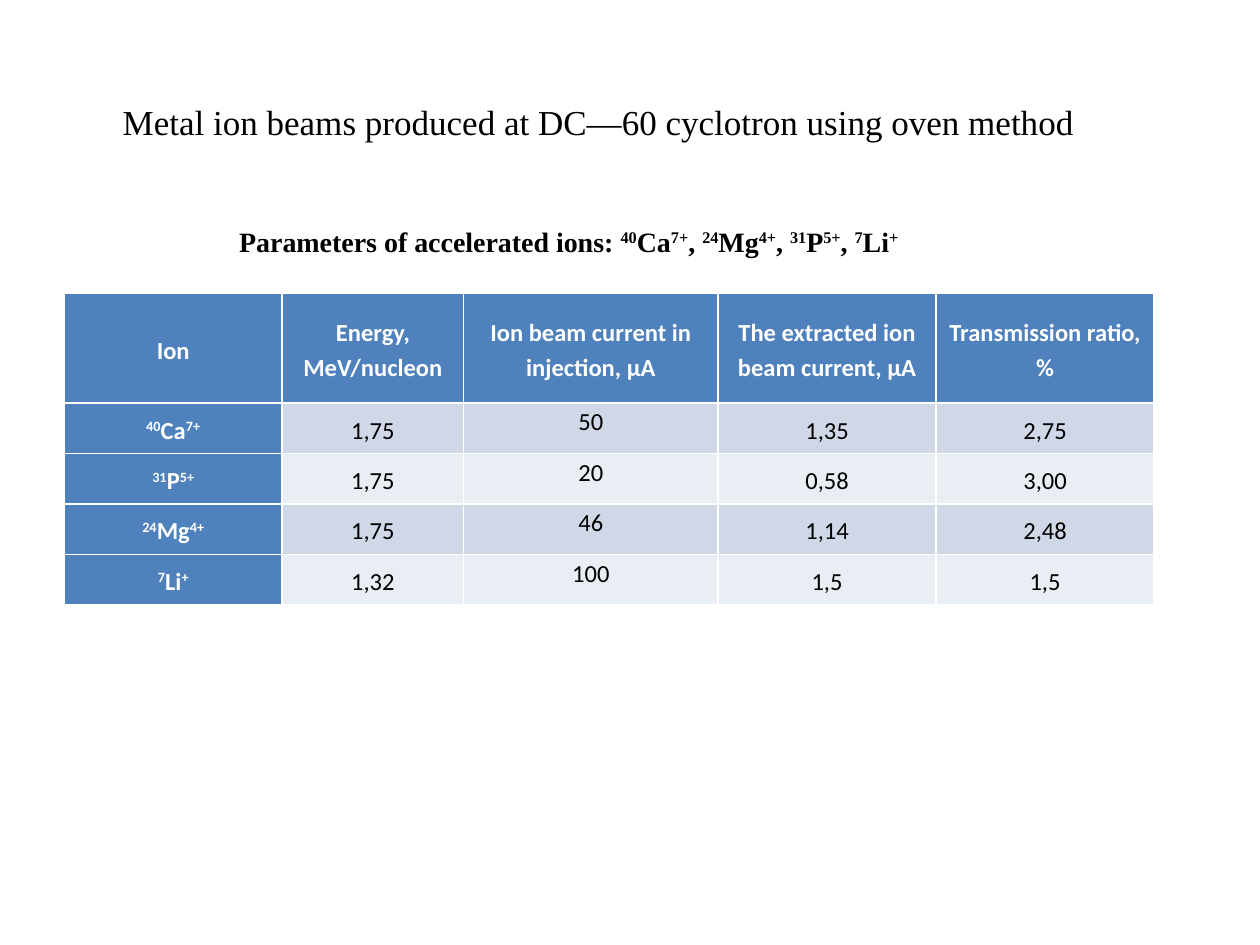
"""Build a slide with a table of metal ion beams from a cyclotron."""
from dataclasses import dataclass

from pptx import Presentation
from pptx.dml.color import RGBColor
from pptx.enum.text import MSO_ANCHOR, MSO_AUTO_SIZE, PP_ALIGN
from pptx.util import Inches, Pt

TOP, MIDDLE = MSO_ANCHOR.TOP, MSO_ANCHOR.MIDDLE
CENTER, JUSTIFY = PP_ALIGN.CENTER, PP_ALIGN.JUSTIFY
NO_FIT = MSO_AUTO_SIZE.NONE

BLACK = RGBColor(0x00, 0x00, 0x00)
WHITE = RGBColor(0xFF, 0xFF, 0xFF)
BLUE = RGBColor(0x4F, 0x81, 0xBD)
BANDS = (RGBColor(0xD0, 0xD8, 0xE8), RGBColor(0xE9, 0xED, 0xF4))
SERIF, SANS = "Times New Roman", "Calibri"

WIDTH, HEIGHT = Inches(10), Inches(7.5)
COLUMN_INCHES = (1.73, 1.44, 2.02, 1.73, 1.73)
HEADER_INCHES, ROW_INCHES = 0.87, 0.4
INJECTION_COLUMN = 2


@dataclass(frozen=True)
class Style:
    font: str
    size: int
    color: RGBColor
    bold: bool = False


@dataclass(frozen=True)
class Ion:
    mass: str
    symbol: str
    charge: str

    def pieces(self) -> list[tuple[str, bool]]:
        return [(self.mass, True), (self.symbol, False), (self.charge, True)]


@dataclass(frozen=True)
class Beam:
    ion: Ion
    values: tuple[str, ...]


CA, P, MG, LI = Ion("40", "Ca", "7+"), Ion("31", "P", "5+"), Ion("24", "Mg", "4+"), Ion("7", "Li", "+")
HEADERS = ("Ion", "Energy, MeV/nucleon", "Ion beam current in injection, µA",
           "The extracted ion beam current, µA", "Transmission ratio, %")
BEAMS = (
    Beam(CA, ("1,75", "50", "1,35", "2,75")),
    Beam(P, ("1,75", "20", "0,58", "3,00")),
    Beam(MG, ("1,75", "46", "1,14", "2,48")),
    Beam(LI, ("1,32", "100", "1,5", "1,5")),
)
TITLE_STYLE = Style(SERIF, 20, BLACK)
SUBTITLE_STYLE = Style(SERIF, 16, BLACK, True)
HEAD_STYLE = Style(SANS, 14, WHITE, True)
BODY_STYLE = Style(SANS, 14, BLACK)


def write(p, pieces: list[tuple[str, bool]], style: Style, align: PP_ALIGN) -> None:
    p.alignment = align
    for text, raised in pieces:
        r = p.add_run()
        r.text = text
        r.font.name, r.font.size, r.font.bold = style.font, Pt(style.size), style.bold
        r.font.color.rgb = style.color
        if raised:
            r._r.get_or_add_rPr().set("baseline", "30000")


def place(sp, left: float, top: float, width: float, height: float) -> None:
    sp.left, sp.top = round(WIDTH * left), round(HEIGHT * top)
    sp.width, sp.height = round(WIDTH * width), round(HEIGHT * height)


def add_title(s) -> None:
    sp = s.shapes.title
    place(sp, 0.075, 0.1, 0.8, 0.06)
    tf = sp.text_frame
    tf.vertical_anchor, tf.auto_size, tf.word_wrap = TOP, NO_FIT, True
    title = "Metal ion beams produced at DC—60 cyclotron using oven method"
    write(tf.paragraphs[0], [(title, False)], TITLE_STYLE, CENTER)


def add_subtitle(s) -> None:
    sp = s.shapes.add_textbox(0, 0, 0, 0)
    place(sp, 0.18, 0.23, 0.7, 0.05)
    tf = sp.text_frame
    tf.word_wrap, tf.vertical_anchor = True, MIDDLE
    pieces = [("Parameters of accelerated ions: ", False)]
    for i, ion in enumerate((CA, MG, P, LI)):
        pieces += ([(", ", False)] if i else []) + ion.pieces()
    write(tf.paragraphs[0], pieces, SUBTITLE_STYLE, JUSTIFY)


def fill_cell(cell, pieces: list[tuple[str, bool]], style: Style, fill: RGBColor,
              anchor: MSO_ANCHOR = MIDDLE) -> None:
    cell.fill.solid()
    cell.fill.fore_color.rgb = fill
    cell.vertical_anchor = anchor
    cell.margin_left = cell.margin_right = Inches(0.07)
    cell.margin_top = cell.margin_bottom = 0
    p = cell.text_frame.paragraphs[0]
    p.line_spacing = 1.15
    write(p, pieces, style, CENTER)


def add_beam_table(s) -> None:
    heights = [HEADER_INCHES] + [ROW_INCHES] * len(BEAMS)
    table = s.shapes.add_table(
        len(heights), len(HEADERS), Inches(0.51), Inches(2.33),
        Inches(sum(COLUMN_INCHES)), Inches(sum(heights))).table
    table.first_col = True
    for column, width in zip(table.columns, COLUMN_INCHES):
        column.width = Inches(width)
    for row, height in zip(table.rows, heights):
        row.height = Inches(height)
    for c, header in enumerate(HEADERS):
        fill_cell(table.cell(0, c), [(header, False)], HEAD_STYLE, BLUE)
    for i, beam in enumerate(BEAMS):
        fill_cell(table.cell(i + 1, 0), beam.ion.pieces(), HEAD_STYLE, BLUE)
        for c, value in enumerate(beam.values, start=1):
            anchor = TOP if c == INJECTION_COLUMN else MIDDLE
            fill_cell(table.cell(i + 1, c), [(value, False)], BODY_STYLE, BANDS[i % 2], anchor)


def main() -> None:
    prs = Presentation()
    prs.slide_width, prs.slide_height = WIDTH, HEIGHT
    s = prs.slides.add_slide(prs.slide_layouts[5])
    add_title(s)
    add_subtitle(s)
    add_beam_table(s)
    prs.save("out.pptx")


if __name__ == "__main__":
    main()
